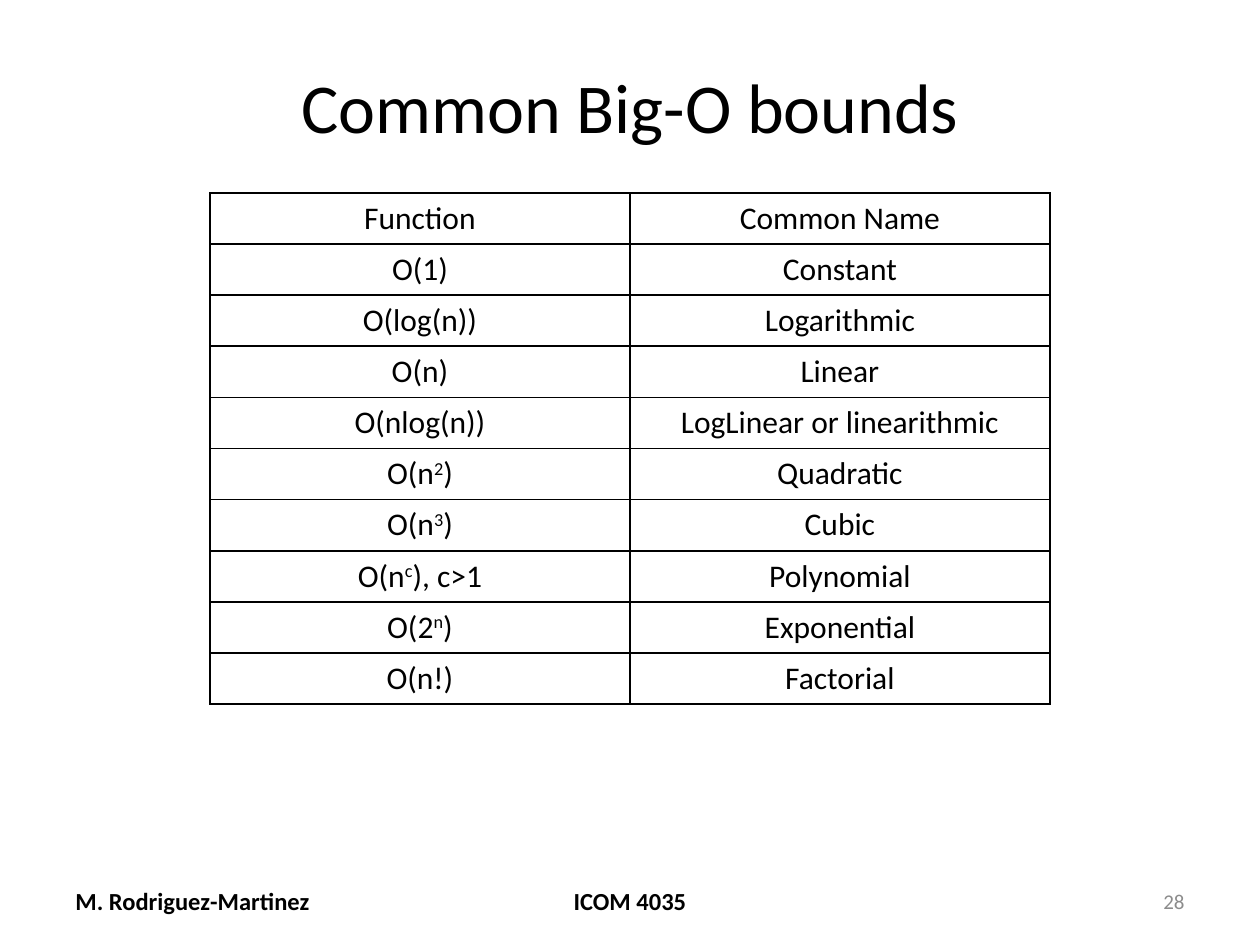
from lxml import etree
from pptx import Presentation
from pptx import util as u
from pptx.dml.color import RGBColor
from pptx.enum import text as t
from pptx.oxml import ns

BLACK = RGBColor(0x00, 0x00, 0x00)
GREY = RGBColor(0x8C, 0x8C, 0x8C)
FONT = "Calibri"
LEFT, CENTER, RIGHT = t.PP_ALIGN.LEFT, t.PP_ALIGN.CENTER, t.PP_ALIGN.RIGHT
WIDTH, HEIGHT = u.Inches(10), u.Inches(7.5)
MARGIN = WIDTH // 20

BOUNDS = [
    ("Function", "Common Name"),
    ("O(1)", "Constant"),
    ("O(log(n))", "Logarithmic"),
    ("O(n)", "Linear"),
    ("O(nlog(n))", "LogLinear or linearithmic"),
    ("O(n^2^)", "Quadratic"),
    ("O(n^3^)", "Cubic"),
    ("O(n^c^), c>1", "Polynomial"),
    ("O(2^n^)", "Exponential"),
    ("O(n!)", "Factorial"),
]


def write(frame, content, size=18, color=BLACK, bold=False, align=CENTER):
    """Text between a pair of ^ marks is raised."""
    paragraph = frame.paragraphs[0]
    paragraph.alignment = align
    for position, piece in enumerate(content.split("^")):
        run = paragraph.add_run()
        run.text = piece
        run.font.name = FONT
        run.font.size = u.Pt(size)
        run.font.bold = bold
        run.font.color.rgb = color
        if position % 2:
            run.font._element.set("baseline", "30000")


def draw_borders(cell, width=u.Pt(1), color=BLACK):
    properties = cell._tc.get_or_add_tcPr()
    for side in ("a:lnL", "a:lnR", "a:lnT", "a:lnB"):
        line = etree.SubElement(properties, ns.qn(side), w=str(width))
        fill = etree.SubElement(line, ns.qn("a:solidFill"))
        etree.SubElement(fill, ns.qn("a:srgbClr"), val=str(color))


def place_heading(slide, left, top, width, height):
    heading = slide.shapes.title
    heading.left, heading.top = left, top
    heading.width, heading.height = width, height
    frame = heading.text_frame
    frame.auto_size = t.MSO_AUTO_SIZE.NONE
    frame.vertical_anchor = t.MSO_ANCHOR.MIDDLE
    write(frame, "Common Big-O bounds", size=40)


def place_bounds(slide, left, top, width, height):
    bounds = slide.shapes.add_table(
        len(BOUNDS), len(BOUNDS[0]), left, top, width, height).table
    bounds.first_row = bounds.horz_banding = False
    for row, entries in enumerate(BOUNDS):
        for column, entry in enumerate(entries):
            cell = bounds.cell(row, column)
            draw_borders(cell)
            cell.fill.background()
            write(cell.text_frame, entry)


def place_footer(slide, left, top, width, height):
    side, middle = width * 7 // 27, width * 19 // 54
    parts = [
        (left, side, "M. Rodriguez-Martinez", dict(size=14, bold=True, align=LEFT)),
        (left + (width - middle) // 2, middle, "ICOM 4035", dict(size=14, bold=True)),
        (left + width - side, side, "28", dict(size=12, color=GREY, align=RIGHT)),
    ]
    for part_left, part_width, content, style in parts:
        frame = slide.shapes.add_textbox(part_left, top, part_width, height).text_frame
        frame.word_wrap = True
        frame.vertical_anchor = t.MSO_ANCHOR.MIDDLE
        write(frame, content, **style)


def main():
    deck = Presentation()
    deck.slide_width, deck.slide_height = WIDTH, HEIGHT
    slide = deck.slides.add_slide(deck.slide_layouts[5])
    place_heading(slide, MARGIN, u.Inches(0.3), WIDTH - 2 * MARGIN, HEIGHT // 7)
    place_bounds(slide, WIDTH // 6, u.Inches(1.53), WIDTH * 2 // 3, u.Inches(4.06))
    place_footer(slide, MARGIN, u.Inches(6.95), WIDTH - 2 * MARGIN, u.Inches(0.4))
    deck.save("out.pptx")


if __name__ == "__main__":
    main()
